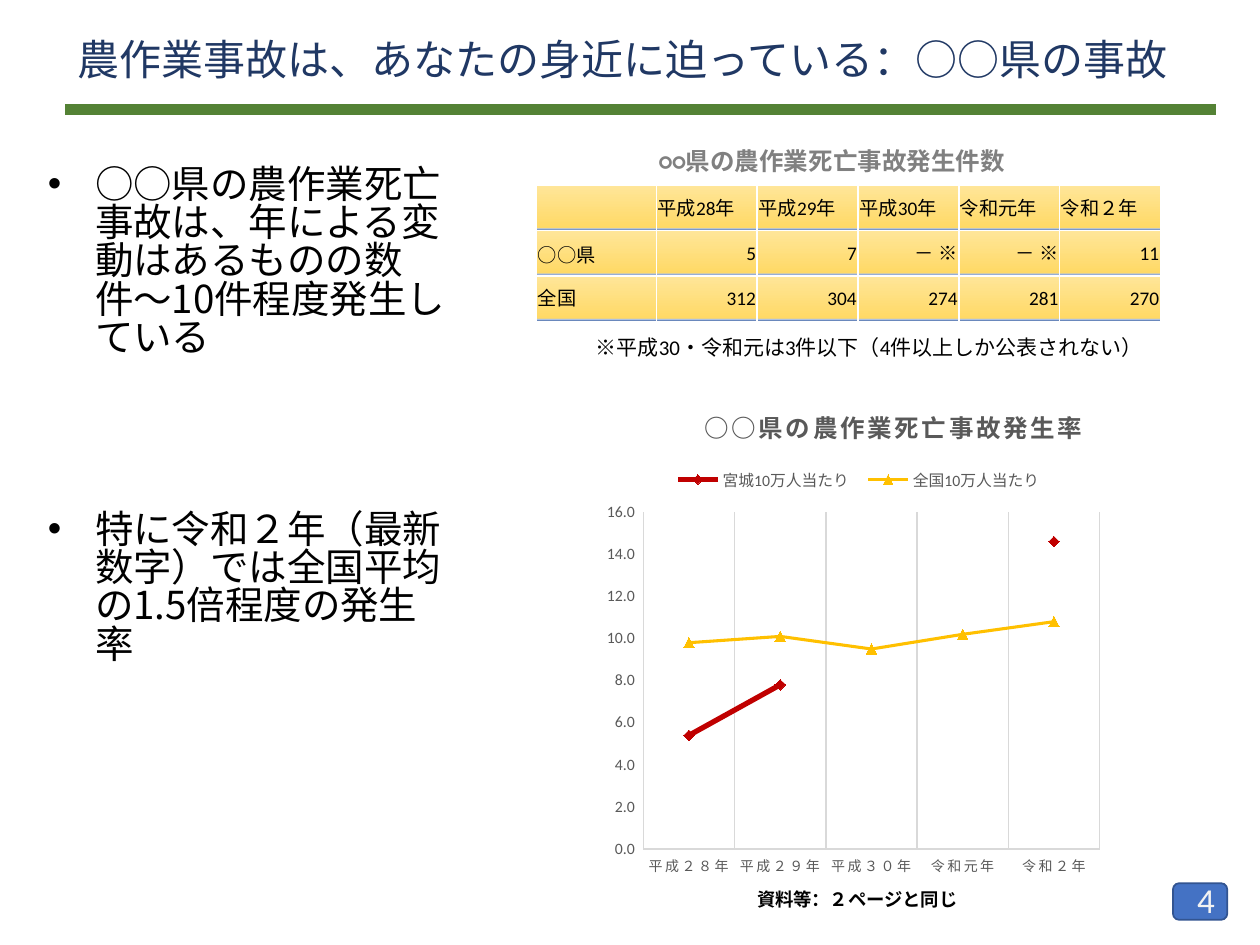
from dataclasses import dataclass

from lxml import etree
from pptx import Presentation
from pptx.chart.data import CategoryChartData
from pptx.dml.color import RGBColor
from pptx.enum import chart as ch, shapes, text
from pptx.oxml import ns, parse_xml
from pptx.util import Pt


@dataclass(frozen=True)
class Theme:
    latin: str = "Calibri"
    japanese: str = "Noto Sans CJK JP"
    navy: str = "203864"
    green: str = "548235"
    blue: str = "4472C4"
    blue_edge: str = "325491"
    red: str = "C00000"
    gold: str = "FFC000"
    black: str = "000000"
    white: str = "FFFFFF"
    pale: str = "F2F2F2"
    gray: str = "808080"
    dark_gray: str = "595959"
    grid: str = "D9D9D9"
    cell_stops: tuple = ((0, "FFE699"), (93, "FFD966"), (96, "ABC0E4"), (100, "2F5597"))
    title: float = 24
    body: float = 22
    number: float = 20
    heading: float = 14
    note: float = 12
    cell: float = 11
    source: float = 10.5
    legend: float = 9
    category: float = 8


T = Theme()
A = "http://schemas.openxmlformats.org/drawingml/2006/main"


def rgb(value):
    return RGBColor.from_string(value)


def style_font(font, size, color, bold=False, name=T.latin):
    font.size, font.bold, font.name = Pt(size), bold, name
    font.color.rgb = rgb(color)


def write(frame, words, *, size, color=T.black, bold=False, font=T.latin,
          align=text.PP_ALIGN.LEFT, anchor=text.MSO_ANCHOR.TOP,
          insets=(7.2, 3.6, 7.2, 3.6), bullet=False, before=0, spacing=None):
    """Fill a text frame with one formatted paragraph."""
    frame.word_wrap = True
    frame.vertical_anchor = anchor
    frame.margin_left, frame.margin_top, frame.margin_right, frame.margin_bottom = map(Pt, insets)
    paragraph = frame.paragraphs[0]
    paragraph.alignment, paragraph.space_before = align, Pt(before)
    if spacing:
        paragraph.line_spacing = spacing
    run = paragraph.add_run()
    run.text = words
    style_font(run.font, size, color, bold, font)
    etree.SubElement(run.font._element, ns.qn("a:ea"), typeface=font)
    if bullet:
        props = paragraph._p.get_or_add_pPr()
        props.set("marL", str(Pt(27)))
        props.set("indent", str(Pt(-27)))
        etree.SubElement(props, ns.qn("a:buFont"), typeface="Arial")
        etree.SubElement(props, ns.qn("a:buChar"), char="•")


def add_text(slide, box, words, **style):
    label = slide.shapes.add_textbox(*map(Pt, box))
    write(label.text_frame, words, **style)


def header(slide, box, words):
    x, y, w, h = box
    add_text(slide, (x, y, w + 7, 36), words, size=T.title, color=T.navy, font=T.japanese)
    rule = slide.shapes.add_connector(shapes.MSO_CONNECTOR.STRAIGHT,
                                      Pt(x), Pt(y + h), Pt(x + w), Pt(y + h))
    rule.line.color.rgb, rule.line.width = rgb(T.green), Pt(6)
    etree.SubElement(rule._element.spPr, ns.qn("a:effectLst"))


def key_points(slide, box, points):
    x, y, w, h = box
    for offset, height, before, words in points:
        add_text(slide, (x, y + offset, w, height), words, size=T.body,
                 font=T.japanese, bullet=True, before=before, spacing=0.83)


def paint_cell(cell):
    """White borders, then the gradient."""
    props = cell._tc.get_or_add_tcPr()
    for side in "LRTB":
        props.append(parse_xml(
            f'<a:ln{side} xmlns:a="{A}" w="{Pt(1)}"><a:solidFill>'
            f'<a:srgbClr val="{T.white}"/></a:solidFill></a:ln{side}>'))
    stops = "".join(f'<a:gs pos="{pos * 1000}"><a:srgbClr val="{color}"/></a:gs>'
                    for pos, color in T.cell_stops)
    props.append(parse_xml(f'<a:gradFill xmlns:a="{A}"><a:gsLst>{stops}</a:gsLst>'
                           '<a:lin ang="5400000" scaled="0"/></a:gradFill>'))


def accident_table(slide, box, rows):
    x, y, w, h = box
    table = slide.shapes.add_table(len(rows), len(rows[0]), *map(Pt, box)).table
    year_width = 57.6
    for index, column in enumerate(table.columns):
        column.width = Pt(year_width if index else w - year_width * (len(rows[0]) - 1))
    for r, row in enumerate(rows):
        table.rows[r].height = Pt(h / len(rows))
        for c, value in enumerate(row):
            cell = table.cell(r, c)
            is_count = r > 0 and c > 0
            write(cell.text_frame, value, size=T.cell,
                  font=T.japanese if (r, c) == (1, 0) else T.latin,
                  align=text.PP_ALIGN.RIGHT if is_count else text.PP_ALIGN.LEFT)
            cell.vertical_anchor = text.MSO_ANCHOR.MIDDLE
            cell.margin_left = cell.margin_top = cell.margin_right = Pt(0.7)
            cell.margin_bottom = 0
            paint_cell(cell)


def place(part, x, y, w=None, h=None, inner=False):
    """Set a chart part's place as fractions of the chart."""
    for old in part.findall(ns.qn("c:layout")):
        part.remove(old)
    values = [("layoutTarget", "inner")] if inner else []
    values += [("xMode", "edge"), ("yMode", "edge"), ("x", x), ("y", y)]
    values += [(key, v) for key, v in (("w", w), ("h", h)) if v is not None]
    tags = "".join(f'<c:{key} val="{v}"/>' for key, v in values)
    layout = parse_xml('<c:layout xmlns:c="http://schemas.openxmlformats.org/drawingml/2006/chart">'
                       f'<c:manualLayout>{tags}</c:manualLayout></c:layout>')
    if inner:
        part.insert(0, layout)
    else:
        part.find(ns.qn("c:overlay")).addprevious(layout)


def rate_chart(slide, box, title, years, rates):
    data = CategoryChartData(number_format="0.0_ ")
    data.categories = years
    for name, values, *_ in rates:
        data.add_series(name, values)
    chart = slide.shapes.add_chart(ch.XL_CHART_TYPE.LINE_MARKERS, *map(Pt, box), data).chart
    style_font(chart.font, 10, T.black)

    # Title and legend
    heading = chart.chart_title.text_frame.paragraphs[0].add_run()
    heading.text = title
    style_font(heading.font, T.heading, T.dark_gray, True)
    heading.font._element.set("spc", "130")
    chart.chart_title.include_in_layout = False
    place(chart.chart_title._element, 0.2, 0.03)
    chart.has_legend = True
    chart.legend.position = ch.XL_LEGEND_POSITION.TOP
    chart.legend.include_in_layout = False
    style_font(chart.legend.font, T.legend, T.dark_gray)
    place(chart.legend._element, 0.13, 0.155, 0.76, 0.06)

    # Axes
    for axis, size in ((chart.category_axis, T.category), (chart.value_axis, T.legend)):
        axis.major_tick_mark = axis.minor_tick_mark = ch.XL_TICK_MARK.NONE
        style_font(axis.tick_labels.font, size, T.dark_gray)
        axis.format.line.color.rgb, axis.format.line.width = rgb(T.grid), Pt(0.75)
    chart.category_axis.tick_labels.font._element.set("spc", "120")
    chart.category_axis.has_major_gridlines = True
    grid = chart.category_axis.major_gridlines.format.line
    grid.color.rgb, grid.width = rgb(T.grid), Pt(0.75)
    rate_axis = chart.value_axis
    rate_axis.has_major_gridlines = False
    rate_axis.minimum_scale, rate_axis.maximum_scale, rate_axis.major_unit = 0, 16, 2
    rate_axis.tick_labels.number_format = "0.0_ "
    rate_axis.tick_labels.number_format_is_linked = False

    # Series
    plot = chart.plots[0]
    plot.vary_by_categories = False
    for series, (_, _, color, width, marker) in zip(plot.series, rates):
        series.smooth = False
        series.format.line.color.rgb, series.format.line.width = rgb(color), Pt(width)
        series.marker.style, series.marker.size = marker, 6
        series.marker.format.fill.solid()
        series.marker.format.fill.fore_color.rgb = rgb(color)
        series.marker.format.line.color.rgb = rgb(color)
    place(chart._chartSpace.chart.plotArea, 0.09, 0.25, 0.89, 0.67, inner=True)


def statistics(slide, box):
    x, y, w, h = box
    add_text(slide, (x + 62.7, y, 225.4, 24.5), "○○県の農作業死亡事故発生件数",
             size=T.heading, color=T.gray, bold=True, insets=(7.2, 3.6, 0, 3.6))
    accident_table(slide, (x, y + 26, w, 77.8), [
        ["", "平成28年", "平成29年", "平成30年", "令和元年", "令和２年"],
        ["○○県", "5", "7", "－ ※", "－ ※", "11"],
        ["全国", "312", "304", "274", "281", "270"]])
    add_text(slide, (x + 26.7, y + 108, 330.5, 21.6),
             "※平成30・令和元は3件以下（4件以上しか公表されない）", size=T.note)
    rate_chart(slide, (x + 34.6, y + 141, 293, 287.3), "○○県の農作業死亡事故発生率",
               ["平成２８年", "平成２９年", "平成３０年", "令和元年", "令和２年"],
               [("宮城10万人当たり", (5.4, 7.8, None, None, 14.6), T.red, 3,
                 ch.XL_MARKER_STYLE.DIAMOND),
                ("全国10万人当たり", (9.8, 10.1, 9.5, 10.2, 10.8), T.gold, 1.75,
                 ch.XL_MARKER_STYLE.TRIANGLE)])
    add_text(slide, (x + 118.8, y + h - 20.2, 144.7, 20.2), "資料等：２ページと同じ",
             size=T.source, bold=True)


def page_number(slide, box, number):
    x, y, w, h = box
    badge = slide.shapes.add_shape(shapes.MSO_SHAPE.ROUNDED_RECTANGLE, *map(Pt, box))
    badge.shadow.inherit = False
    badge.fill.solid()
    badge.fill.fore_color.rgb = rgb(T.blue)
    badge.line.color.rgb, badge.line.width = rgb(T.blue_edge), Pt(1)
    add_text(slide, (x + w - 153.4, y, 153.4, 18.7), number, size=T.number, color=T.pale,
             align=text.PP_ALIGN.RIGHT, anchor=text.MSO_ANCHOR.MIDDLE)


def main():
    deck = Presentation()
    deck.slide_width, deck.slide_height = Pt(720), Pt(540)
    slide = deck.slides.add_slide(deck.slide_layouts[6])
    page_number(slide, (670.3, 504.7, 31, 20.9), "4")
    header(slide, (37.4, 15.8, 657.4, 46.8), "農作業事故は、あなたの身近に迫っている：○○県の事故")
    key_points(slide, (20.2, 92.2, 246.2, 311), [
        (0, 140.4, 6, "○○県の農作業死亡事故は、年による変動はあるものの数件～10件程度発生している"),
        (197.2, 113.8, 0, "特に令和２年（最新数字）では全国平均の1.5倍程度の発生率")])
    statistics(slide, (306.7, 79.9, 356.4, 444.3))
    deck.save("out.pptx")


if __name__ == "__main__":
    main()
